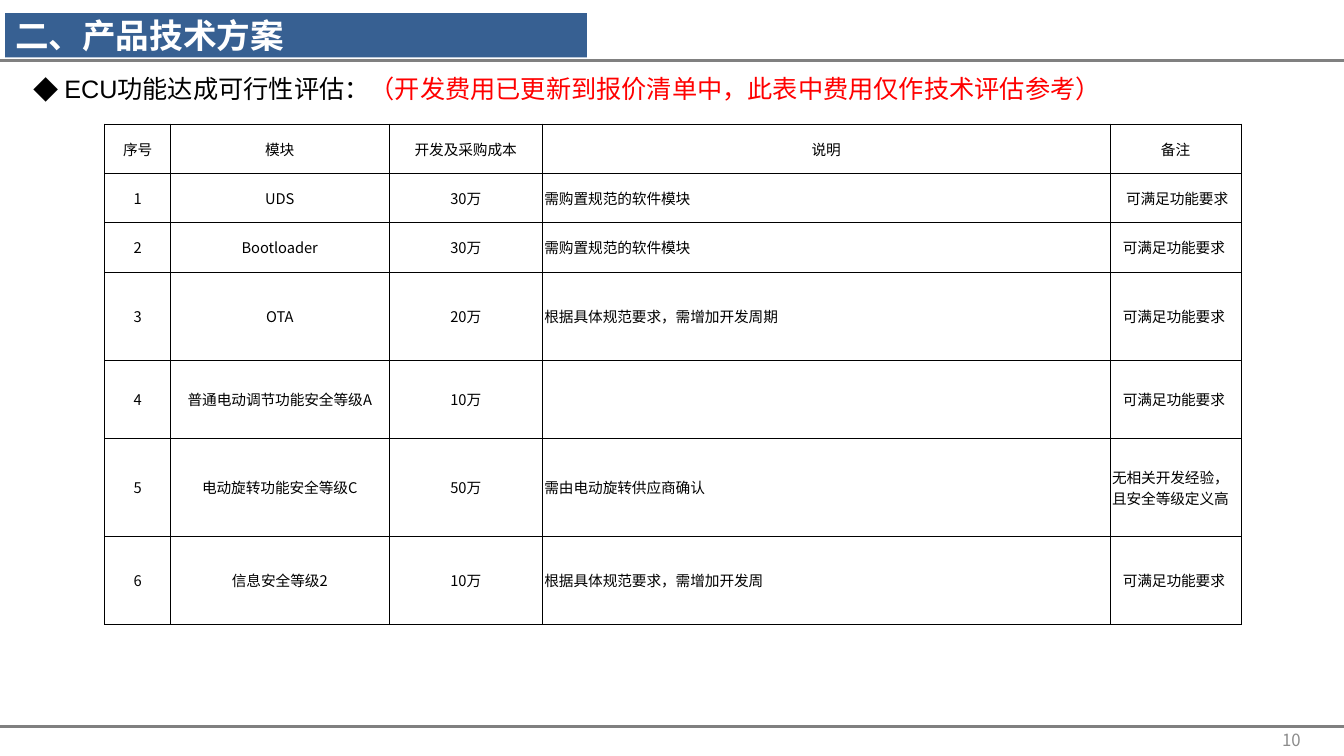
from lxml.etree import SubElement
from pptx import Presentation
from pptx.dml.color import RGBColor
from pptx.enum.shapes import MSO_CONNECTOR
from pptx.enum.text import MSO_ANCHOR, MSO_AUTO_SIZE, PP_ALIGN
from pptx.oxml import parse_xml
from pptx.oxml.ns import nsdecls, qn
from pptx.util import Inches, Pt

COLORS = {
    "black": "000000", "white": "FFFFFF", "red": "FF0000",
    "banner": "376092", "rule": "808080", "number": "8C8C8C",
}
CJK = "Noto Sans CJK SC"
COLUMN_WIDTHS = [0.65, 2.17, 1.52, 5.63, 1.3]
ROW_HEIGHTS = [0.49, 0.49, 0.49, 0.88, 0.77, 0.97, 0.88]
ASSESSMENT = [
    ["序号", "模块", "开发及采购成本", "说明", "备注"],
    ["1", "UDS", "30万", "需购置规范的软件模块", " 可满足功能要求"],
    ["2", "Bootloader", "30万", "需购置规范的软件模块", "可满足功能要求 "],
    ["3", "OTA", "20万", "根据具体规范要求，需增加开发周期", "可满足功能要求 "],
    ["4", "普通电动调节功能安全等级A", "10万", "", "可满足功能要求 "],
    ["5", "电动旋转功能安全等级C", "50万", "需由电动旋转供应商确认",
     "无相关开发经验，且安全等级定义高"],
    ["6", "信息安全等级2", "10万", "根据具体规范要求，需增加开发周", "可满足功能要求 "],
]
LEFT_ALIGNED = {(row, 3) for row in range(1, 7)} | {(5, 4)}


def apply(target, values):
    """Set each named attribute on the target."""
    for name, value in values.items():
        setattr(target, name, value)


class SlideBuilder:
    """Hold the shared style and the slide being built."""

    def __init__(self, presentation):
        """Add a title-only slide."""
        self.slide = presentation.slides.add_slide(presentation.slide_layouts[5])
        self.frame_format = {
            "word_wrap": True, "auto_size": MSO_AUTO_SIZE.NONE,
            "vertical_anchor": MSO_ANCHOR.MIDDLE,
        }
        self.inset = Inches(0.02)

    def run(self, paragraph, text, size, color="black", font=CJK, bold=False):
        """Append a formatted run to a paragraph."""
        run = paragraph.add_run()
        run.text = text
        apply(run.font, {"size": Pt(size), "name": font, "bold": bold})
        run.font.color.rgb = RGBColor.from_string(COLORS[color])
        SubElement(run.font._element, qn("a:ea"), typeface=CJK)

    def title(self, text, box):
        """Place the title as a filled banner."""
        title = self.slide.shapes.title
        apply(title, dict(zip(("left", "top", "width", "height"), map(Inches, box))))
        title.fill.solid()
        title.fill.fore_color.rgb = RGBColor.from_string(COLORS["banner"])
        apply(title.text_frame, self.frame_format | {"word_wrap": False})
        paragraph = title.text_frame.paragraphs[0]
        paragraph.alignment = PP_ALIGN.LEFT
        self.run(paragraph, text, 24, "white", bold=True)

    def rule(self, top):
        """Draw a horizontal line across the slide."""
        line = self.slide.shapes.add_connector(
            MSO_CONNECTOR.STRAIGHT, 0, Inches(top), Inches(13.33), Inches(top))
        line.line.width = Pt(2)
        line.line.color.rgb = RGBColor.from_string(COLORS["rule"])
        SubElement(line._element.spPr, qn("a:effectLst"))

    def text(self, box, runs, alignment=PP_ALIGN.LEFT, bullet=None):
        """Add a one-paragraph text box with an optional bullet."""
        frame = self.slide.shapes.add_textbox(*map(Inches, box)).text_frame
        apply(frame, self.frame_format)
        paragraph = frame.paragraphs[0]
        paragraph.alignment = alignment
        if bullet:
            properties = paragraph._p.get_or_add_pPr()
            properties.set("marL", str(Inches(0.31)))
            properties.set("indent", str(-Inches(0.31)))
            SubElement(properties, qn("a:buFont"), typeface=CJK)
            SubElement(properties, qn("a:buChar"), char=bullet)
        for values in runs:
            self.run(paragraph, **values)

    def border(self, cell):
        """Give a cell thin black borders on all sides."""
        properties = cell._tc.get_or_add_tcPr()
        for index, side in enumerate("LRTB"):
            properties.insert(index, parse_xml(
                f'<a:ln{side} {nsdecls("a")} w="{Pt(0.75)}"><a:solidFill>'
                f'<a:srgbClr val="{COLORS["black"]}"/></a:solidFill></a:ln{side}>'))

    def table(self, left, top, rows, widths, heights, left_aligned):
        """Add a bordered table without banding."""
        table = self.slide.shapes.add_table(
            len(rows), len(widths), Inches(left), Inches(top),
            Inches(sum(widths)), Inches(sum(heights))).table
        apply(table, {"first_row": False, "horz_banding": False})
        for column, width in zip(table.columns, widths):
            column.width = Inches(width)
        for row, height in zip(table.rows, heights):
            row.height = Inches(height)
        margins = {f"margin_{side}": self.inset
                   for side in ("left", "right", "top", "bottom")}
        for row, texts in enumerate(rows):
            for column, text in enumerate(texts):
                cell = table.cell(row, column)
                apply(cell, margins | {"vertical_anchor": MSO_ANCHOR.MIDDLE})
                cell.fill.background()
                self.border(cell)
                paragraph = cell.text_frame.paragraphs[0]
                is_left = (row, column) in left_aligned
                paragraph.alignment = PP_ALIGN.LEFT if is_left else PP_ALIGN.CENTER
                if text:
                    self.run(paragraph, text, 10.5)


def main():
    """Build and save the feasibility slide."""
    presentation = Presentation()
    apply(presentation, {"slide_width": Inches(13.33), "slide_height": Inches(7.5)})
    builder = SlideBuilder(presentation)
    for top in (0.6, 7.21):
        builder.rule(top)
    builder.text((9.89, 7.14, 3.11, 0.4),
                 [{"text": "10", "size": 12, "color": "number"}], PP_ALIGN.RIGHT)
    builder.title("二、产品技术方案", (0.05, 0.13, 5.77, 0.44))
    builder.text((0.23, 0.68, 12.88, 0.4), [
        {"text": "ECU功能达成可行性评估", "size": 18, "font": "Arial"},
        {"text": "：", "size": 18},
        {"text": "（开发费用已更新到报价清单中，此表中费用仅作技术评估参考）",
         "size": 18, "color": "red"},
    ], bullet="◆")
    builder.table(1.04, 1.23, ASSESSMENT, COLUMN_WIDTHS, ROW_HEIGHTS, LEFT_ALIGNED)
    presentation.save("out.pptx")


if __name__ == "__main__":
    main()
